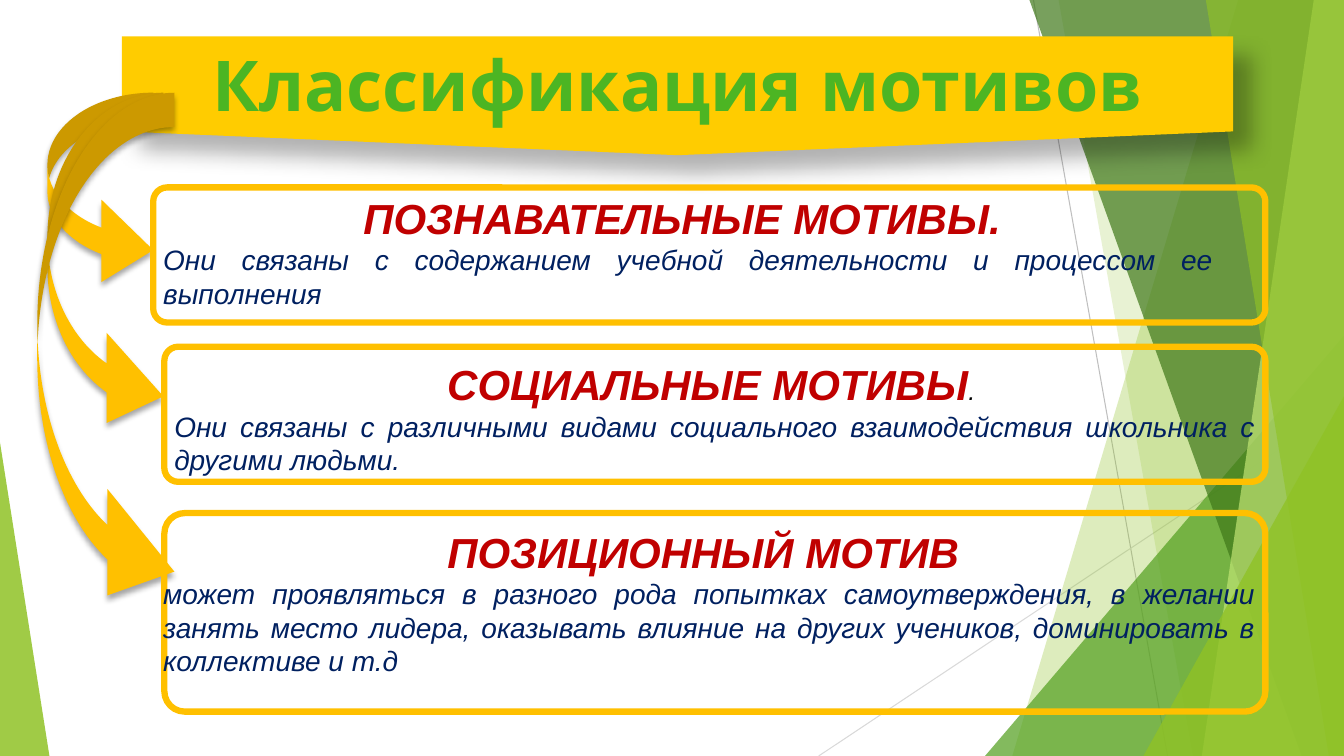
from dataclasses import dataclass

from lxml import etree
from pptx import Presentation
from pptx.dml.color import RGBColor
from pptx.enum.shapes import MSO_CONNECTOR, MSO_SHAPE
from pptx.enum.text import MSO_ANCHOR, MSO_AUTO_SIZE, PP_ALIGN
from pptx.oxml.ns import qn
from pptx.util import Emu, Pt

PX = 9144  # one px is a hundredth of an inch
WIDTH, HEIGHT = 1333, 750

TRIANGLE = MSO_SHAPE.ISOSCELES_TRIANGLE
ROUNDED = MSO_SHAPE.ROUNDED_RECTANGLE
CURVED_ARROW = MSO_SHAPE.CURVED_RIGHT_ARROW
BANNER = MSO_SHAPE.FLOWCHART_OFFPAGE_CONNECTOR
STRAIGHT = MSO_CONNECTOR.STRAIGHT
CENTER, JUSTIFY = PP_ALIGN.CENTER, PP_ALIGN.JUSTIFY
MIDDLE, TOP = MSO_ANCHOR.MIDDLE, MSO_ANCHOR.TOP
FIT_SHAPE = MSO_AUTO_SIZE.SHAPE_TO_FIT_TEXT

LIME = RGBColor(0x90, 0xC2, 0x26)
GREEN = RGBColor(0x54, 0xA0, 0x21)
FOREST = RGBColor(0x3F, 0x78, 0x19)
PALE_LIME = RGBColor(0xC0, 0xE4, 0x74)
GRAY = RGBColor(0xBF, 0xBF, 0xBF)
LIGHT_GRAY = RGBColor(0xD9, 0xD9, 0xD9)
YELLOW = RGBColor(0xFF, 0xCC, 0x00)
AMBER = RGBColor(0xFF, 0xC0, 0x00)
TITLE_GREEN = RGBColor(0x4C, 0xB5, 0x23)
RED = RGBColor(0xC0, 0x00, 0x00)
NAVY = RGBColor(0x00, 0x20, 0x60)
BLACK = RGBColor(0x00, 0x00, 0x00)

TITLE = {"name": "Karla", "size": Pt(50), "bold": True}
HEADING = {"name": "Arial", "size": Pt(30), "bold": True, "italic": True}
FULL_STOP = {"name": "Arial", "size": Pt(18), "bold": False, "italic": True}
BODY = {"name": "Arial", "size": Pt(20), "bold": False, "italic": True}


@dataclass
class Box:
    left: int
    top: int
    width: int
    height: int

    def emu(self) -> list[Emu]:
        return [Emu(v * PX) for v in (self.left, self.top, self.width, self.height)]


@dataclass
class Band:
    """A facet reaching from the slanted edge to the right side of the slide."""
    top_x: int
    bottom_x: int
    color: RGBColor
    opacity: int


@dataclass
class Corner:
    box: Box
    apex: int
    color: RGBColor
    opacity: int


@dataclass
class Shadow:
    opacity: int
    blur: int
    distance: int
    angle: int


@dataclass
class Span:
    text: str
    style: dict
    color: RGBColor


@dataclass
class Motive:
    frame: Box
    arrow: Box
    text_box: Box
    heading: list[Span]
    body: str


FACETS = [
    Band(1228, 1004, LIME, 30),
    Band(1050, 1183, LIME, 20),
    Corner(Box(977, 333, 356, 417), 1, GREEN, 72),
    Band(1021, 1291, FOREST, 70),
    Band(1303, 1192, PALE_LIME, 70),
    Band(1196, 1318, LIME, 65),
    Corner(Box(1134, 393, 199, 357), 1, LIME, 80),
    Corner(Box(0, 439, 49, 311), 0, LIME, 85),
]
RAYS = [((1025, 0), (1158, 750), GRAY), ((1333, 403), (812, 750), LIGHT_GRAY)]
TITLE_SHADOW = Shadow(30, 15, 18, 45)
ARROW_SHADOW = Shadow(35, 4, 3, 90)

MOTIVES = [
    Motive(Box(152, 186, 1103, 134), Box(47, 92, 105, 197), Box(152, 186, 1061, 128),
           [Span("ПОЗНАВАТЕЛЬНЫЕ МОТИВЫ. ", HEADING, RED)],
           "Они связаны с содержанием учебной деятельности и процессом ее выполнения"),
    Motive(Box(163, 344, 1092, 134), Box(47, 92, 115, 346), Box(163, 351, 1092, 128),
           [Span("СОЦИАЛЬНЫЕ МОТИВЫ", HEADING, RED), Span(". ", FULL_STOP, BLACK)],
           "Они связаны с различными видами социального взаимодействия школьника "
           "с другими людьми. "),
    Motive(Box(163, 509, 1092, 197), Box(37, 92, 136, 528), Box(152, 517, 1103, 162),
           [Span("ПОЗИЦИОННЫЙ МОТИВ ", HEADING, RED)],
           "может проявляться в разного рода попытках самоутверждения, в желании "
           "занять место лидера, оказывать влияние на других учеников, "
           "доминировать в коллективе и т.д"),
]


def paint(shape, color: RGBColor, opacity: int = 100) -> None:
    shape.shadow.inherit = False
    shape.line.fill.background()
    shape.fill.solid()
    shape.fill.fore_color.rgb = color
    if opacity < 100:
        tint = shape.fill._xPr.find(f"{qn('a:solidFill')}/{qn('a:srgbClr')}")
        etree.SubElement(tint, qn("a:alpha"), val=str(opacity * 1000))


def cast_shadow(shape, shadow: Shadow) -> None:
    effects = shape._element.spPr.find(qn("a:effectLst"))
    outer = etree.SubElement(
        effects, qn("a:outerShdw"), blurRad=str(Pt(shadow.blur)),
        dist=str(Pt(shadow.distance)), dir=str(shadow.angle * 60000),
        algn="tl", rotWithShape="0")
    tint = etree.SubElement(outer, qn("a:srgbClr"), val=str(BLACK))
    etree.SubElement(tint, qn("a:alpha"), val=str(shadow.opacity * 1000))


def add_preset(page, kind, box: Box, adjustments: tuple = ()):
    shape = page.shapes.add_shape(kind, *box.emu())
    shape.shadow.inherit = False
    for index, value in enumerate(adjustments):
        shape.adjustments[index] = value
    return shape


def add_ray(page, start: tuple, end: tuple, color: RGBColor) -> None:
    ray = page.shapes.add_connector(STRAIGHT, *(Emu(v * PX) for v in start + end))
    ray.line.color.rgb = color
    ray.line.width = Pt(0.75)
    etree.SubElement(ray._element.spPr, qn("a:effectLst"))


def add_facet(page, facet: Band | Corner) -> None:
    if isinstance(facet, Band):
        outline = page.shapes.build_freeform(facet.top_x, 0, scale=PX)
        outline.add_line_segments(
            [(WIDTH, 0), (WIDTH, HEIGHT), (facet.bottom_x, HEIGHT)], close=True)
        shape = outline.convert_to_shape()
    else:
        shape = add_preset(page, TRIANGLE, facet.box, (facet.apex,))
    paint(shape, facet.color, facet.opacity)


def write(para, spans: list[Span], alignment) -> None:
    para.alignment = alignment
    for span in spans:
        run = para.add_run()
        run.text = span.text
        for name, value in span.style.items():
            setattr(run.font, name, value)
        run.font.color.rgb = span.color


def add_title(page) -> None:
    banner = add_preset(page, BANNER, Box(121, 36, 1102, 118))
    paint(banner, YELLOW)
    cast_shadow(banner, TITLE_SHADOW)
    banner.text_frame.word_wrap = True
    banner.text_frame.vertical_anchor = MIDDLE
    write(banner.text_frame.paragraphs[0],
          [Span("Классификация мотивов", TITLE, TITLE_GREEN)], CENTER)


def add_motive(page, motive: Motive) -> None:
    arrow = add_preset(page, CURVED_ARROW, motive.arrow, (0.25, 0.778, 0.489))
    paint(arrow, AMBER)
    cast_shadow(arrow, ARROW_SHADOW)

    frame = add_preset(page, ROUNDED, motive.frame, (0.103,))
    frame.fill.background()
    frame.line.color.rgb = AMBER
    frame.line.width = Pt(4.5)

    text = page.shapes.add_textbox(*motive.text_box.emu()).text_frame
    for name, value in {"word_wrap": True, "auto_size": FIT_SHAPE,
                        "vertical_anchor": TOP}.items():
        setattr(text, name, value)
    write(text.paragraphs[0], motive.heading, CENTER)
    write(text.add_paragraph(), [Span(motive.body, BODY, NAVY)], JUSTIFY)


def main() -> None:
    deck = Presentation()
    deck.slide_width, deck.slide_height = Emu(WIDTH * PX), Emu(HEIGHT * PX)
    page = deck.slides.add_slide(deck.slide_layouts[6])
    for start, end, color in RAYS:
        add_ray(page, start, end, color)
    for facet in FACETS:
        add_facet(page, facet)
    add_title(page)
    for motive in MOTIVES:
        add_motive(page, motive)
    deck.save("out.pptx")


if __name__ == "__main__":
    main()
